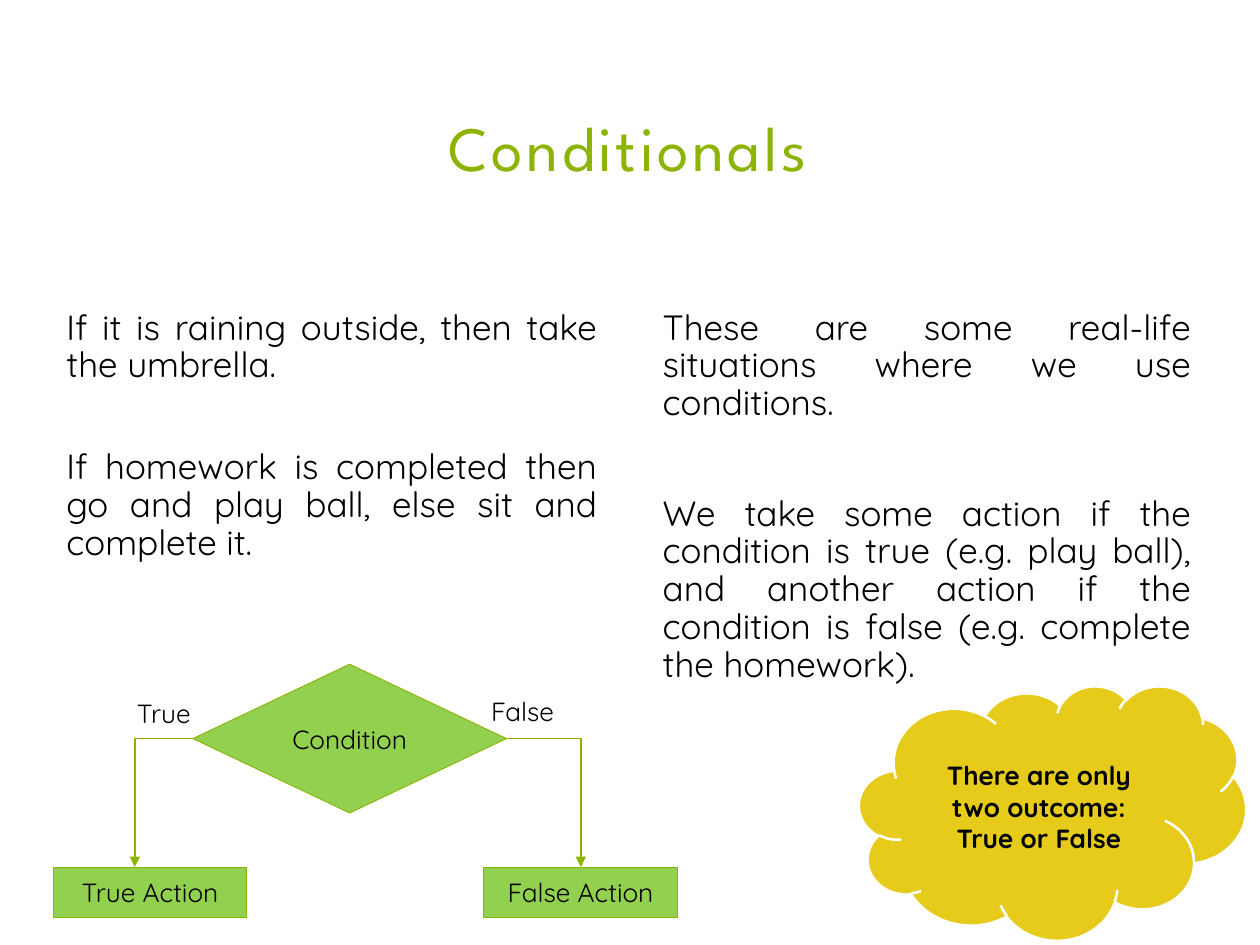
import dataclasses

import pptx
import pptx.dml.color
import pptx.enum.shapes
import pptx.enum.text
import pptx.oxml
import pptx.oxml.ns
import pptx.util

Cm = pptx.util.Cm
Pt = pptx.util.Pt
RGB = pptx.dml.color.RGBColor.from_string
Align = pptx.enum.text.PP_ALIGN
Anchor = pptx.enum.text.MSO_ANCHOR
Shape = pptx.enum.shapes.MSO_SHAPE
Link = pptx.enum.shapes.MSO_CONNECTOR


@dataclasses.dataclass(frozen=True)
class Theme:
    head: str = "League Spartan"
    body: str = "Quicksand"
    title: str = "8DB403"
    ink: str = "000000"
    node: str = "92D050"
    edge: str = "8DB302"
    arrow: str = "8DB401"
    cloud: str = "E7CB1B"
    white: str = "FFFFFF"
    big: int = 36
    text: int = 20
    small: int = 15


THEME = Theme()
SMALL = {"name": THEME.body, "size": Pt(THEME.small)}
BODY = {"name": THEME.body, "size": Pt(THEME.text)}
HEAD = {"name": THEME.head, "size": Pt(THEME.big)}
FLOW = {"alignment": Align.JUSTIFY, "line_spacing": 0.9}


def apply(item, values):
    for key, value in values.items():
        setattr(item, key, value)


def write(para, text, font, color=THEME.ink, form=None):
    run = para.add_run()
    run.text = text
    apply(run.font, font)
    run.font.color.rgb = RGB(color)
    apply(para, form or {})
    return run


def place(box):
    return [Cm(v) for v in box]


def add_title(slide, box, text):
    title = slide.shapes.title
    apply(title, dict(zip(("left", "top", "width", "height"), place(box))))
    frame = title.text_frame
    apply(frame, {"vertical_anchor": Anchor.TOP, "word_wrap": True,
                  "auto_size": pptx.enum.text.MSO_AUTO_SIZE.NONE})
    form = {"alignment": Align.CENTER, "line_spacing": 0.9, "space_before": Pt(0)}
    run = write(frame.paragraphs[0], text, HEAD, THEME.title, form)
    run.font._element.set("spc", "200")


def add_column(slide, box, texts, gap):
    frame = slide.shapes.add_textbox(*place(box)).text_frame
    frame.word_wrap = True
    for i, text in enumerate(texts):
        para = frame.paragraphs[0] if i == 0 else frame.add_paragraph()
        write(para, text, BODY, form={**FLOW, "space_before": Pt(gap if i else 0)})


def add_node(slide, kind, box, text, fill=THEME.node, line=THEME.edge, width=0.5, bold=False):
    node = slide.shapes.add_shape(kind, *place(box))
    node.shadow.inherit = False
    node.fill.solid()
    node.fill.fore_color.rgb = RGB(fill)
    node.line.color.rgb = RGB(line)
    node.line.width = Pt(width)
    frame = node.text_frame
    apply(frame, {"word_wrap": True, "vertical_anchor": Anchor.MIDDLE})
    write(frame.paragraphs[0], text, {**SMALL, "bold": bold},
          form={"alignment": Align.CENTER})


def add_arrow(slide, start, end):
    """Draw an arrow that runs across, then down."""
    arrow = slide.shapes.add_connector(Link.ELBOW, *place(start + end))
    arrow.line.color.rgb = RGB(THEME.arrow)
    arrow.line.width = Pt(1)
    props = arrow._element.spPr
    props.find(pptx.oxml.ns.qn("a:prstGeom")).set("prst", "bentConnector2")
    tail = pptx.oxml.parse_xml(
        f'<a:tailEnd {pptx.oxml.ns.nsdecls("a")} type="triangle"/>')
    arrow.line._get_or_add_ln().append(tail)
    props.append(pptx.oxml.parse_xml(f'<a:effectLst {pptx.oxml.ns.nsdecls("a")}/>'))


def add_label(slide, box, text):
    frame = slide.shapes.add_textbox(*place(box)).text_frame
    frame.word_wrap = True
    write(frame.paragraphs[0], text, SMALL)


def add_chart(slide, box):
    """Draw the flow chart: one condition and its two branches."""
    left, top, width, height = box
    tip, span, rise = left + 2.82, 6.32, 3
    wide, high = 3.91, 1.02
    floor, mid = top + height - high, top + rise / 2
    add_node(slide, Shape.FLOWCHART_DECISION, (tip, top, span, rise), "Condition")
    branches = (
        # word, action left, arrow start, arrow end, label box
        ("True", left, tip, left + 1.65, (left + 1.44, top + 0.55, 1.78, 0.89)),
        ("False", left + width - wide, tip + span, left + 10.64,
         (left + 8.58, top + 0.5, 2.06, 0.89)),
    )
    for word, side, start, end, label in branches:
        add_node(slide, Shape.RECTANGLE, (side, floor, wide, high), f"{word} Action")
        add_arrow(slide, (start, mid), (end, floor))
        add_label(slide, label, word)


def main():
    deck = pptx.Presentation()
    deck.slide_width, deck.slide_height = Cm(25.4), Cm(19.05)
    slide = deck.slides.add_slide(deck.slide_layouts.get_by_name("Title Only"))

    add_title(slide, (0.43, 2.24, 24.46, 3.51), "Conditionals")
    add_column(slide, (1.09, 6.12, 11.2, 12.55), (
        "If it is raining outside, then take the umbrella.",
        "If homework is completed then go and play ball, else sit and complete it.",
    ), 36.5)
    add_column(slide, (13.11, 6.12, 11.15, 12.55), (
        "These are some real-life situations where we use conditions.",
        "We take some action if the condition is true (e.g. play ball), and another "
        "action if the condition is false (e.g. complete the homework).",
    ), 41.5)
    add_chart(slide, (1.07, 13.39, 12.59, 5.11))
    add_node(slide, Shape.CLOUD, (17.32, 13.82, 7.8, 5.13),
             "There are only two outcome: True or False",
             THEME.cloud, THEME.white, 1.5, True)

    deck.save("out.pptx")


if __name__ == "__main__":
    main()
